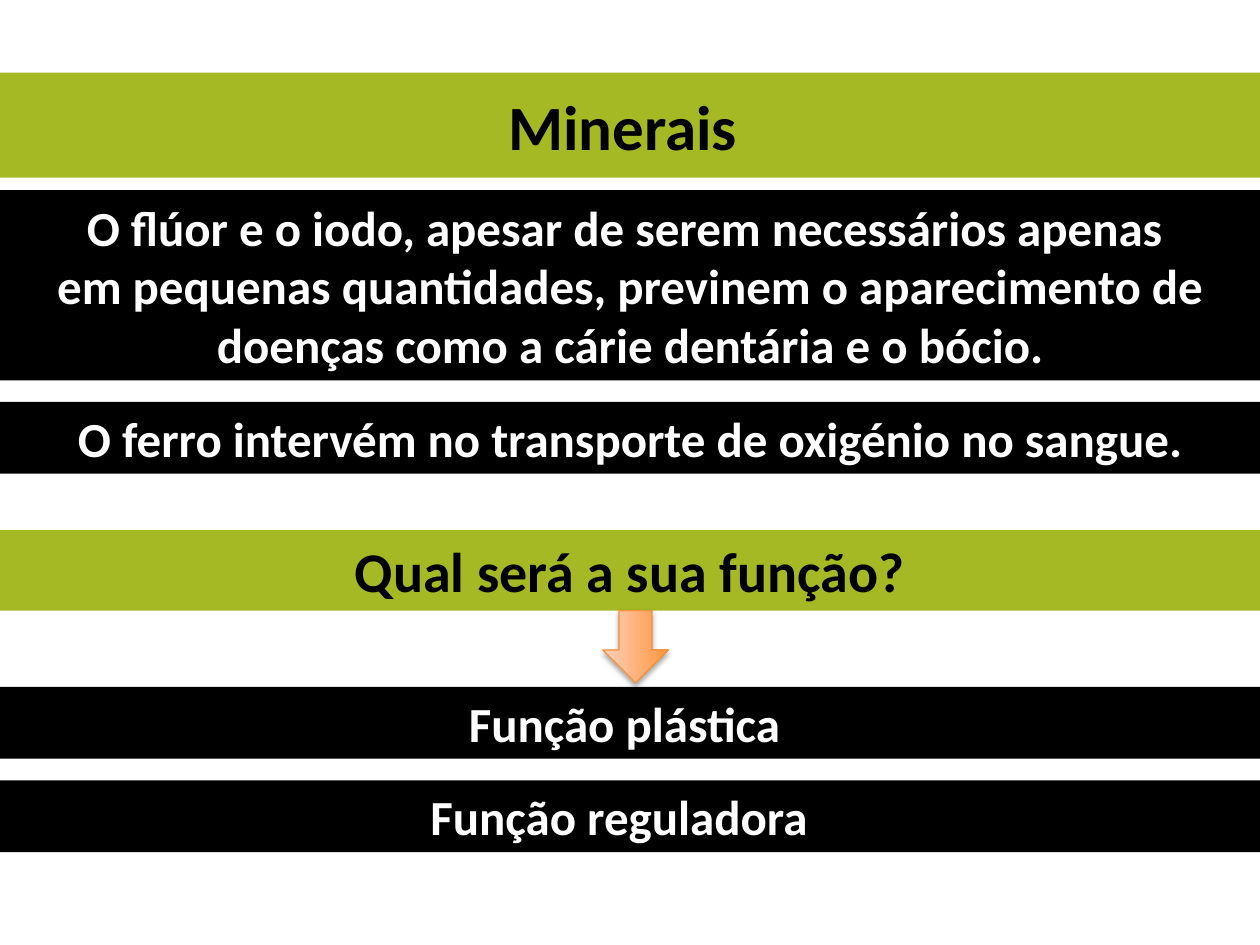
from lxml import etree
from pptx import Presentation
from pptx.dml.color import RGBColor
from pptx.enum.shapes import MSO_SHAPE
from pptx.enum.text import MSO_ANCHOR, MSO_AUTO_SIZE, PP_ALIGN
from pptx.oxml.ns import qn
from pptx.util import Pt

DOWN_ARROW = MSO_SHAPE.DOWN_ARROW
MIDDLE = MSO_ANCHOR.MIDDLE
GROW = MSO_AUTO_SIZE.SHAPE_TO_FIT_TEXT
CENTER = PP_ALIGN.CENTER

SLIDE_W, SLIDE_H = 720, 540
GREEN, BLACK, WHITE = "A4B924", "000000", "FFFFFF"
HEADING, FACT = (GREEN, BLACK), (BLACK, WHITE)

TITLE = ("Minerais ", 46, 51, 36, HEADING)
BANDS = [
    ("O flúor e o iodo, apesar de serem necessários apenas \v"
     "em pequenas quantidades, previnem o aparecimento de "
     "doenças como a cárie dentária e o bócio.", 108.7, 108.7, 28, FACT),
    ("O ferro intervém no transporte de oxigénio no sangue.", 229.7, 41, 28, FACT),
    ("Qual será a sua função?", 303, 46, 32, HEADING),
    ("Função plástica ", 392.5, 41, 28, FACT),
    ("Função reguladora  ", 446, 41, 28, FACT),
]
ARROW_BOX = (344.4, 349, 37.6, 41.2)
ARROW_GRADIENT = ("FFD2BD", "FF953E")
ARROW_LINE = "F69240"


def rgb(value):
    """Turn a hex string into a colour."""
    return RGBColor.from_string(value)


def fill_band(band, text, top, height, size, colours):
    """Place a full-width band and format its text."""
    background, foreground = colours
    band.left, band.top = Pt(0), Pt(top)
    band.width, band.height = Pt(SLIDE_W), Pt(height)
    band.fill.solid()
    band.fill.fore_color.rgb = rgb(background)
    frame = band.text_frame
    frame.word_wrap = True
    frame.auto_size = GROW
    frame.vertical_anchor = MIDDLE
    paragraph = frame.paragraphs[0]
    paragraph.text = text
    paragraph.alignment = CENTER
    paragraph.font.name = "Calibri"
    paragraph.font.size = Pt(size)
    paragraph.font.bold = True
    paragraph.font.color.rgb = rgb(foreground)


def add_arrow(slide):
    """Draw the shaded arrow from the question to its answers."""
    arrow = slide.shapes.add_shape(DOWN_ARROW, *map(Pt, ARROW_BOX))
    arrow.fill.gradient()
    arrow.fill.gradient_angle = 0
    for stop, colour in zip(arrow.fill.gradient_stops, ARROW_GRADIENT):
        stop.color.rgb = rgb(colour)
    arrow.line.color.rgb = rgb(ARROW_LINE)
    arrow.line.width = Pt(0.75)
    arrow.shadow.inherit = False
    effects = arrow.element.spPr.find(qn("a:effectLst"))
    shadow = etree.SubElement(
        effects, qn("a:outerShdw"), blurRad=str(Pt(3.1)), dist=str(Pt(1.8)),
        dir="5400000", rotWithShape="0")
    shade = etree.SubElement(shadow, qn("a:srgbClr"), val=BLACK)
    etree.SubElement(shade, qn("a:alpha"), val="35000")


def main():
    """Build and save the minerals slide."""
    deck = Presentation()
    deck.slide_width, deck.slide_height = Pt(SLIDE_W), Pt(SLIDE_H)
    slide = deck.slides.add_slide(deck.slide_layouts[5])
    fill_band(slide.shapes.title, *TITLE)
    for band in BANDS:
        fill_band(slide.shapes.add_textbox(0, 0, 0, 0), *band)
    add_arrow(slide)
    deck.save("out.pptx")


if __name__ == "__main__":
    main()
